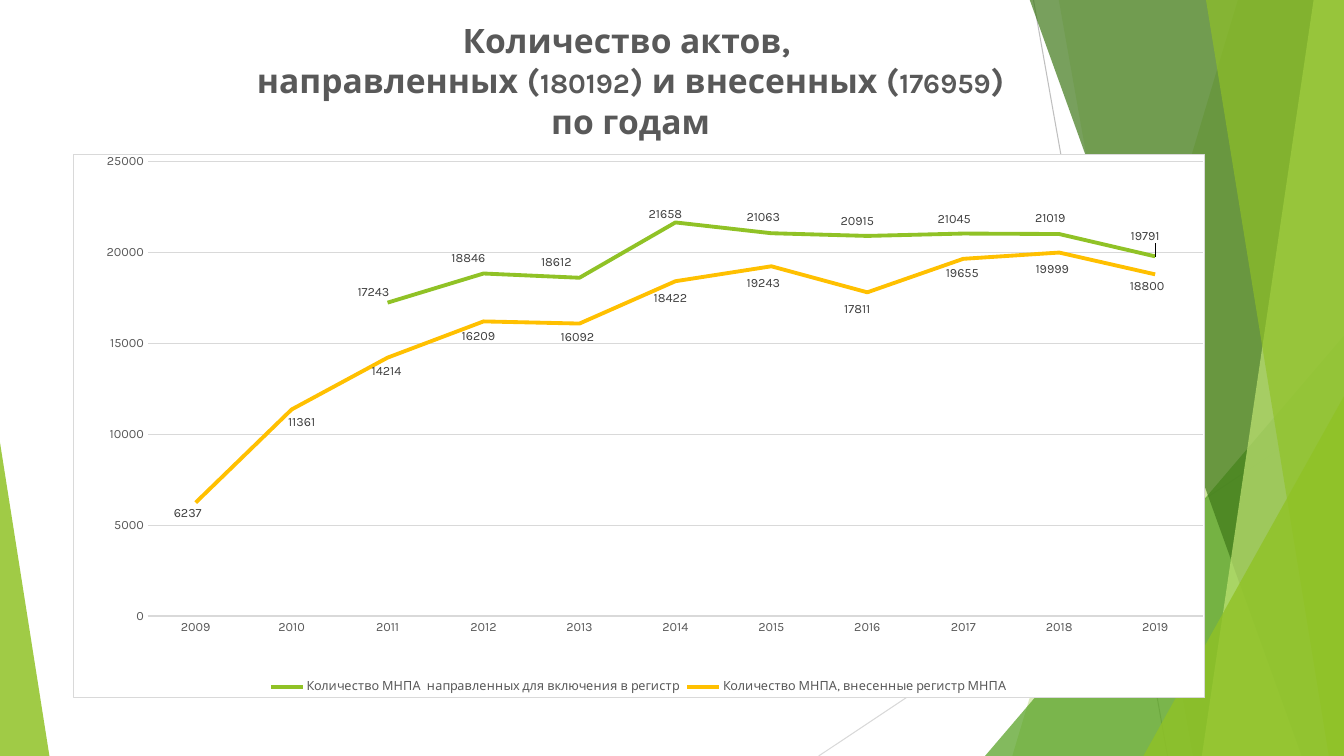
"""Build the slide with a line chart of acts sent and registered by year."""
from lxml import etree
from pptx import Presentation
from pptx.chart.data import CategoryChartData
from pptx.dml.color import RGBColor
from pptx.enum.chart import XL_CHART_TYPE, XL_LABEL_POSITION as POS
from pptx.enum.chart import XL_LEGEND_POSITION, XL_MARKER_STYLE, XL_TICK_MARK
from pptx.enum.shapes import MSO_CONNECTOR, MSO_SHAPE
from pptx.enum.text import MSO_ANCHOR, PP_ALIGN
from pptx.oxml import parse_xml
from pptx.oxml.ns import nsdecls, qn
from pptx.util import Inches, Pt

FONT = "Karla"
COLORS = {
    "green": "90C226", "leaf": "54A021", "dark": "3F7819", "lime": "C0E474",
    "amber": "FFC000", "white": "FFFFFF", "text": "595959", "label": "404040",
    "rule": "BFBFBF", "grid": "D9D9D9", "black": "000000",
}


def rgb(name):
    return RGBColor.from_string(COLORS[name])


def style_font(font, size, color, bold=False):
    font.name = FONT
    font.size = Pt(size)
    font.bold = bold
    font.color.rgb = rgb(color)


prs = Presentation()
prs.slide_width, prs.slide_height = Inches(13.33), Inches(7.5)
s = prs.slides.add_slide(prs.slide_layouts[6])

for x1, y1, x2, y2, color in [(10.25, 0, 11.58, 7.5, "rule"),
                              (13.33, 4.03, 8.12, 7.5, "grid")]:
    ln = s.shapes.add_connector(MSO_CONNECTOR.STRAIGHT, Inches(x1), Inches(y1),
                                Inches(x2), Inches(y2))
    ln.line.color.rgb = rgb(color)
    ln.line.width = Pt(0.75)
    etree.SubElement(ln._element.spPr, qn("a:effectLst"))

facets = [
    ("band", (12.28, 10.04), "green", 30),
    ("band", (10.5, 11.83), "green", 20),
    ("triangle", (9.77, 3.33, 3.56, 4.17, 1), "leaf", 72),
    ("band", (10.21, 12.91), "dark", 70),
    ("band", (13.03, 11.92), "lime", 70),
    ("band", (11.96, 13.18), "green", 65),
    ("triangle", (11.34, 3.93, 1.99, 3.57, 1), "green", 80),
    ("triangle", (0, 4.39, 0.49, 3.11, 0), "green", 85),
]
for kind, geometry, color, opacity in facets:
    if kind == "band":
        top, bottom = geometry
        fb = s.shapes.build_freeform(Inches(top), Inches(-0.01))
        fb.add_line_segments([(Inches(x), Inches(y)) for x, y in
                              [(13.33, -0.01), (13.33, 7.5), (bottom, 7.5)]])
        sp = fb.convert_to_shape()
    else:
        *box, apex = geometry
        sp = s.shapes.add_shape(MSO_SHAPE.ISOSCELES_TRIANGLE, *map(Inches, box))
        sp.adjustments[0] = apex
    sp.shadow.inherit = False
    sp.line.fill.background()
    sp.fill.solid()
    sp.fill.fore_color.rgb = rgb(color)
    clr = sp._element.spPr.find(".//" + qn("a:srgbClr"))
    etree.SubElement(clr, qn("a:alpha"), val=str(opacity * 1000))

title = s.shapes.add_textbox(Inches(0.78), Inches(0.15), Inches(10.95), Inches(1.44))
tf = title.text_frame
tf.word_wrap = True
tf.vertical_anchor = MSO_ANCHOR.TOP
p = tf.paragraphs[0]
p.alignment = PP_ALIGN.CENTER
title_lines = [
    [("Количество актов, ", 24)],
    [("направленных (", 24), ("180192", 20), (") и внесенных (", 24),
     ("176959", 20), (")", 24)],
    [("по годам", 24)],
]
for i, line in enumerate(title_lines):
    if i:
        p.add_line_break()
    for text, size in line:
        r = p.add_run()
        r.text = text
        style_font(r.font, size, "text", bold=True)

sent = [None, None, 17243, 18846, 18612, 21658, 21063, 20915, 21045, 21019, 19791]
registered = [6237, 11361, 14214, 16209, 16092, 18422, 19243, 17811, 19655, 19999, 18800]
cd = CategoryChartData()
cd.categories = [str(year) for year in range(2009, 2020)]
cd.add_series("Количество МНПА  направленных для включения в регистр", sent)
cd.add_series("Количество МНПА, внесенные регистр МНПА", registered)
chart_w, chart_h = 11.23, 5.4
chart = s.shapes.add_chart(XL_CHART_TYPE.LINE, Inches(0.72), Inches(1.53),
                           Inches(chart_w), Inches(chart_h), cd).chart
chart.has_title = False
style_font(chart.font, 10, "black")
chart.has_legend = True
chart.legend.position = XL_LEGEND_POSITION.BOTTOM
chart.legend.include_in_layout = False
style_font(chart.legend.font, 9, "text")

cat_ax, val_ax = chart.category_axis, chart.value_axis
for ax in (cat_ax, val_ax):
    ax.major_tick_mark = ax.minor_tick_mark = XL_TICK_MARK.NONE
    style_font(ax.tick_labels.font, 9, "text")
cat_ax.format.line.color.rgb = rgb("grid")
cat_ax.format.line.width = Pt(1)
val_ax.minimum_scale, val_ax.maximum_scale, val_ax.major_unit = 0, 25000, 5000
val_ax.format.line.fill.background()
val_ax.major_gridlines.format.line.color.rgb = rgb("grid")
val_ax.major_gridlines.format.line.width = Pt(0.75)

sent_shifts = [(-0.14, -0.1), (-0.15, -0.15), (-0.23, -0.15), (-0.1, -0.08), (-0.08, -0.16),
               (-0.1, -0.15), (-0.09, -0.14), (-0.09, -0.16), (-0.1, -0.2)]
registered_shifts = [(-0.08, 0.11), (0.1, 0.13), (-0.01, 0.14), (-0.05, 0.15),
                     (-0.02, 0.14), (-0.05, 0.17), (-0.08, 0.17), (-0.1, 0.17),
                     (-0.01, 0.14), (-0.07, 0.17), (-0.08, 0.12)]
series_styles = [("green", 2, sent_shifts), ("amber", 0, registered_shifts)]
for ser, (color, first, shifts) in zip(chart.plots[0].series, series_styles):
    ser.smooth = False
    ser.marker.style = XL_MARKER_STYLE.NONE
    ser.format.line.color.rgb = rgb(color)
    ser.format.line.width = Pt(2.75)
    for i, (dx, dy) in enumerate(shifts, first):
        label = ser.points[i].data_label
        style_font(label.font, 9, "label")
        label.position = POS.CENTER
        idx = ser._element.xpath(f"c:dLbls/c:dLbl/c:idx[@val='{i}']")[0]
        idx.addnext(parse_xml(
            f'<c:layout {nsdecls("c")}><c:manualLayout><c:x val="{dx / chart_w:.4f}"/>'
            f'<c:y val="{dy / chart_h:.4f}"/></c:manualLayout></c:layout>'))

plot_area = chart._chartSpace.chart.plotArea
for old in plot_area.findall(qn("c:layout")):
    plot_area.remove(old)
plot_area.insert(0, parse_xml(
    f'<c:layout {nsdecls("c")}><c:manualLayout><c:layoutTarget val="inner"/>'
    '<c:xMode val="edge"/><c:yMode val="edge"/><c:x val="0.066"/><c:y val="0.013"/>'
    '<c:w val="0.933"/><c:h val="0.836"/></c:manualLayout></c:layout>'))
chart._chartSpace.chart.addnext(parse_xml(
    f'<c:spPr {nsdecls("c", "a")}>'
    f'<a:solidFill><a:srgbClr val="{COLORS["white"]}"/></a:solidFill>'
    f'<a:ln w="{Pt(0.75)}"><a:solidFill><a:srgbClr val="{COLORS["grid"]}"/>'
    '</a:solidFill></a:ln></c:spPr>'))

prs.save("out.pptx")
